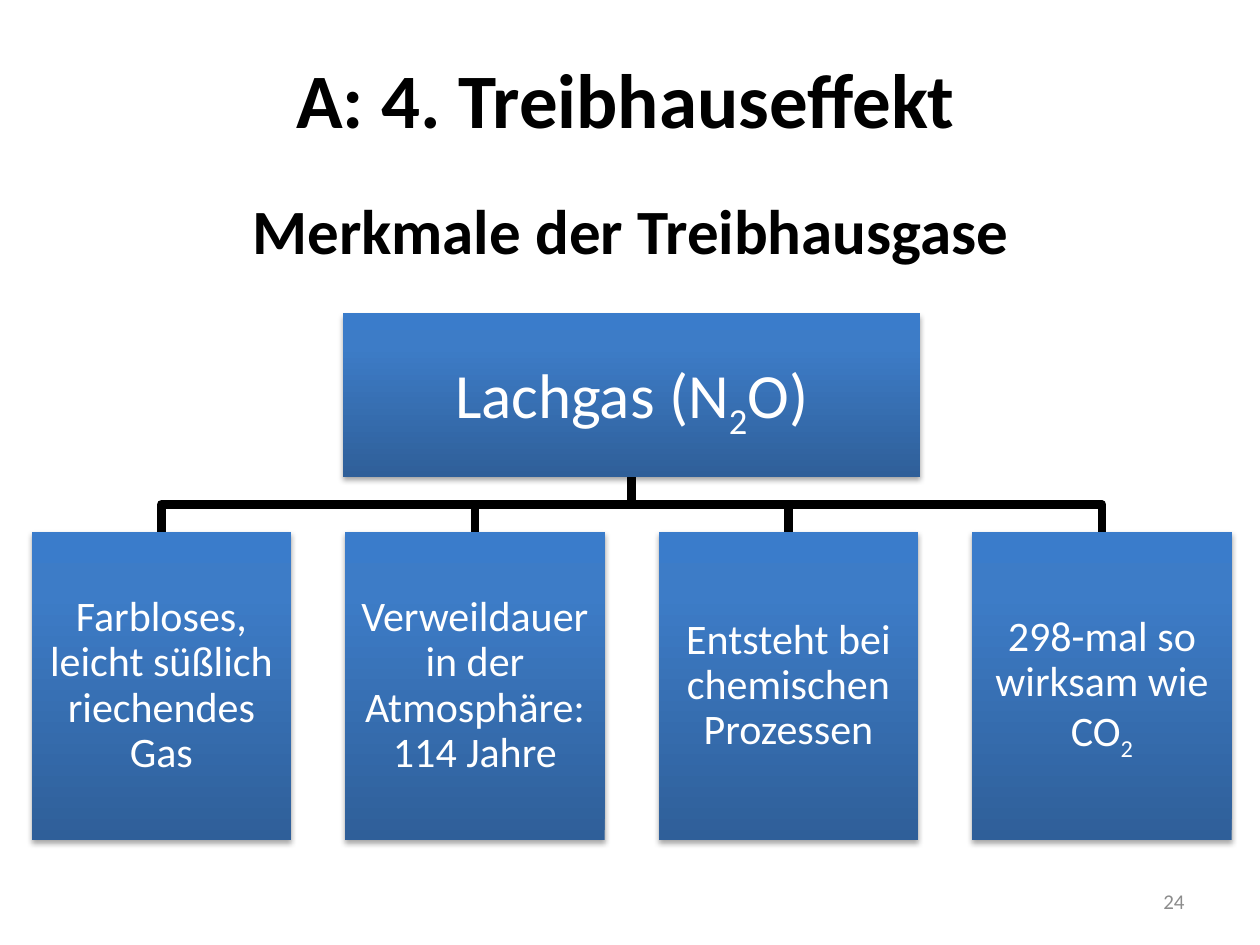
import copy

import pptx
import pptx.dml.color
import pptx.enum.shapes
import pptx.enum.text
import pptx.oxml
import pptx.oxml.ns
import pptx.util
from pptx.util import Cm, Pt

ALIGN = pptx.enum.text.PP_ALIGN
ANCHOR = pptx.enum.text.MSO_ANCHOR
GRADIENT = [(0, "2F5F99"), (0.8, "3D7CC7"), (1, "3A7CCB")]
SHADOW = (
    '<a:outerShdw xmlns:a="http://schemas.openxmlformats.org/drawingml/2006/main" '
    'blurRad="40000" dist="23000" dir="5400000" rotWithShape="0">'
    '<a:srgbClr val="000000"><a:alpha val="35000"/></a:srgbClr></a:outerShdw>'
)

CHILD_LEFT, CHILD_TOP, CHILD_WIDTH, CHILD_HEIGHT = 0.64, 10.72, 5.23, 6.22
CHILD_PITCH = 6.32
PARENT_TOP, PARENT_WIDTH, PARENT_HEIGHT = 6.32, 11.63, 3.3
PARENT_BOTTOM = PARENT_TOP + PARENT_HEIGHT
BUS_TOP = (PARENT_BOTTOM + CHILD_TOP) / 2
FEATURES = [
    ["Farbloses, leicht süßlich riechendes Gas"],
    ["Verweildauer in der Atmosphäre: 114 Jahre"],
    ["Entsteht bei chemischen Prozessen"],
    ["298-mal so wirksam wie CO", "2"],
]


def color(value):
    return pptx.dml.color.RGBColor.from_string(value)


def write(box, parts, size, shade, align=ALIGN.CENTER, bold=False):
    para = box.text_frame.paragraphs[0]
    para.alignment = align
    para.font.name = "Calibri"
    para.font.size = Pt(size)
    para.font.bold = bold
    para.font.color.rgb = color(shade)
    for index, part in enumerate(parts):
        span = para.add_run()
        span.text = part
        if index % 2:
            span.font._element.set("baseline", "-25000")
    return para


def place(box, left, top, width, height):
    box.left, box.top = Cm(left), Cm(top)
    box.width, box.height = Cm(width), Cm(height)


def add_label(page, left, top, width, height, text, size, shade, **style):
    box = page.shapes.add_textbox(Cm(left), Cm(top), Cm(width), Cm(height))
    box.text_frame.word_wrap = True
    write(box, [text], size, shade, **style)
    return box


def paint_gradient(box):
    box.fill.gradient()
    box.fill.gradient_angle = 90
    stop_list = box._element.spPr.find(".//" + pptx.oxml.ns.qn("a:gsLst"))
    stop_list.append(copy.deepcopy(stop_list[-1]))
    for stop, (position, shade) in zip(box.fill.gradient_stops, GRADIENT):
        stop.position = position
        stop.color.rgb = color(shade)


def add_node(page, left, top, width, height, parts, size, inset):
    box = page.shapes.add_shape(
        pptx.enum.shapes.MSO_SHAPE.RECTANGLE, Cm(left), Cm(top), Cm(width), Cm(height)
    )
    paint_gradient(box)
    box.line.fill.background()
    box.shadow.inherit = False
    effects = box._element.spPr.find(pptx.oxml.ns.qn("a:effectLst"))
    effects.append(pptx.oxml.parse_xml(SHADOW))
    frame = box.text_frame
    frame.word_wrap = True
    frame.vertical_anchor = ANCHOR.MIDDLE
    frame.margin_left = frame.margin_right = Cm(inset)
    frame.margin_top = frame.margin_bottom = Cm(inset)
    para = write(box, parts, size, "FFFFFF")
    para.line_spacing = 0.9
    para.space_after = Pt(size * 0.35)


def add_branch(page, start, end):
    builder = page.shapes.build_freeform(Cm(start), Cm(PARENT_BOTTOM))
    corners = [(start, BUS_TOP), (end, BUS_TOP), (end, CHILD_TOP)]
    builder.add_line_segments([(Cm(x), Cm(y)) for x, y in corners], close=False)
    branch = builder.convert_to_shape()
    branch.fill.background()
    branch.line.color.rgb = color("000000")
    branch.line.width = Pt(5)
    branch.shadow.inherit = False


def add_tree(page):
    lefts = [CHILD_LEFT + index * CHILD_PITCH for index in range(len(FEATURES))]
    middle = (lefts[0] + lefts[-1] + CHILD_WIDTH) / 2
    for left in lefts:
        add_branch(page, middle, left + CHILD_WIDTH / 2)
    add_node(page, middle - PARENT_WIDTH / 2, PARENT_TOP, PARENT_WIDTH, PARENT_HEIGHT,
             ["Lachgas (N", "2", "O)"], 36, 0.08)
    for left, parts in zip(lefts, FEATURES):
        add_node(page, left, CHILD_TOP, CHILD_WIDTH, CHILD_HEIGHT, parts, 24, 0.05)


def main():
    deck = pptx.Presentation()
    deck.slide_width, deck.slide_height = Cm(25.4), Cm(19.05)
    page = deck.slides.add_slide(deck.slide_layouts[5])

    title = page.shapes.title
    place(title, 0.51, 0.91, 24.21, 2.13)
    title.text_frame.vertical_anchor = ANCHOR.TOP
    write(title, ["A: 4. Treibhauseffekt"], 44, "000000", bold=True)

    add_tree(page)
    add_label(page, 0.61, 3.73, 24.21, 1.8, "Merkmale der Treibhausgase", 36, "000000",
              bold=True)
    number = add_label(page, 18.2, 17.66, 5.93, 1.01, "24", 12, "8C8C8C",
                       align=ALIGN.RIGHT)
    number.text_frame.vertical_anchor = ANCHOR.MIDDLE
    deck.save("out.pptx")


if __name__ == "__main__":
    main()
